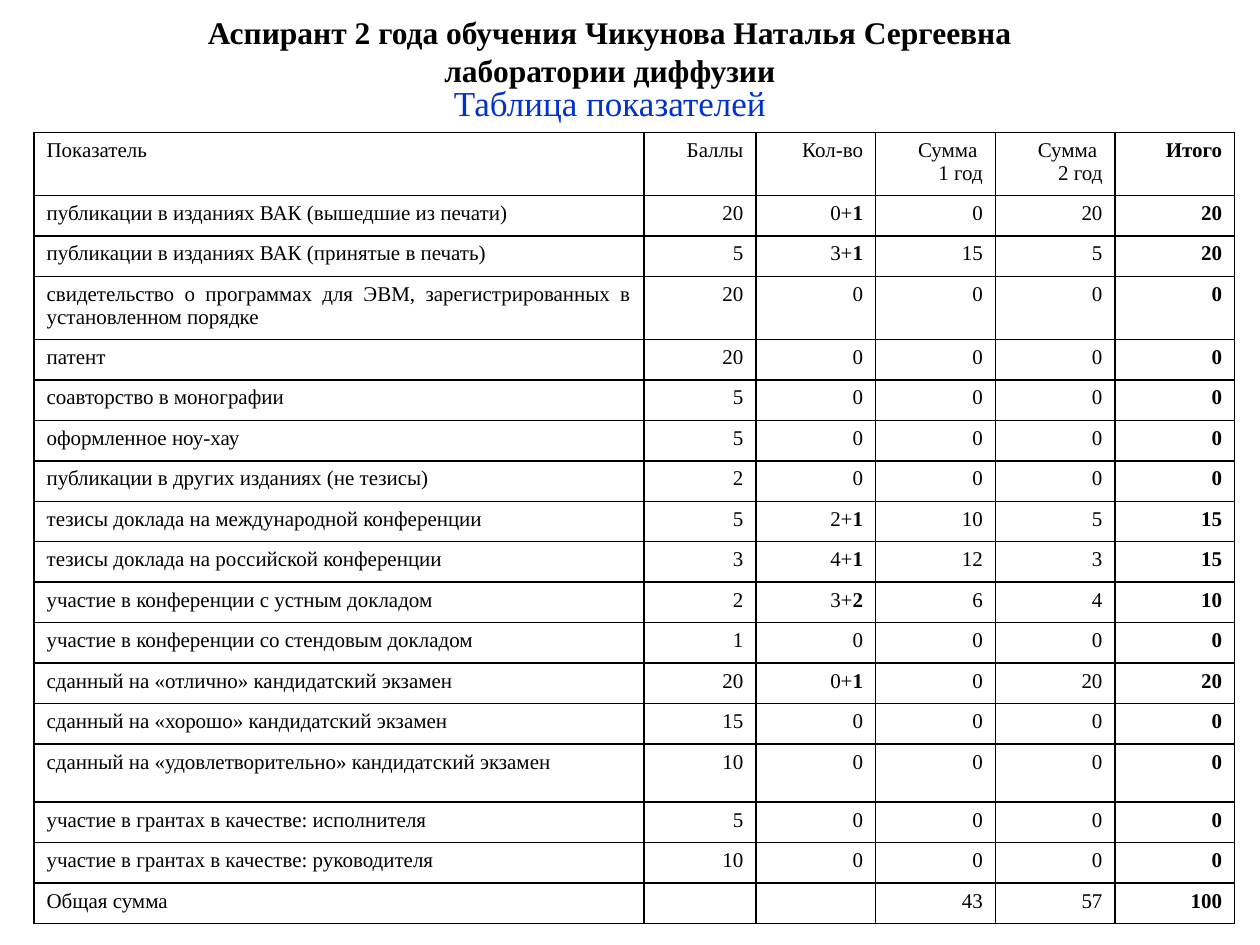
from lxml.etree import SubElement
from pptx import Presentation
from pptx.dml.color import RGBColor
from pptx.enum.text import MSO_ANCHOR, PP_ALIGN
from pptx.oxml import parse_xml
from pptx.oxml.ns import nsdecls, qn
from pptx.util import Inches, Pt

FONT = "Times New Roman"
COLORS = {"text": "000000", "accent": "0033CC", "line": "000000"}

TITLE = "Аспирант 2 года обучения Чикунова Наталья Сергеевна\vлаборатории диффузии"
CAPTION = "Таблица показателей"
HEAD = ("Показатель", "Баллы", "Кол-во", "Сумма \v1 год", "Сумма \v2 год", "Итого")
SCORES = [
    ("публикации в изданиях ВАК (вышедшие из печати)", 20, "0+1", 0, 20),
    ("публикации в изданиях ВАК (принятые в печать)", 5, "3+1", 15, 5),
    ("свидетельство о программах для ЭВМ, зарегистрированных в установленном порядке",
     20, "0", 0, 0),
    ("патент", 20, "0", 0, 0),
    ("соавторство в монографии", 5, "0", 0, 0),
    ("оформленное ноу-хау", 5, "0", 0, 0),
    ("публикации в других изданиях (не тезисы)", 2, "0", 0, 0),
    ("тезисы доклада на международной конференции", 5, "2+1", 10, 5),
    ("тезисы доклада на российской конференции", 3, "4+1", 12, 3),
    ("участие в конференции с устным докладом", 2, "3+2", 6, 4),
    ("участие в конференции со стендовым докладом", 1, "0", 0, 0),
    ("сданный на «отлично» кандидатский экзамен", 20, "0+1", 0, 20),
    ("сданный на «хорошо» кандидатский экзамен", 15, "0", 0, 0),
    ("сданный на «удовлетворительно» кандидатский экзамен", 10, "0", 0, 0),
    ("участие в грантах в качестве: исполнителя", 5, "0", 0, 0),
    ("участие в грантах в качестве: руководителя", 10, "0", 0, 0),
    ("Общая сумма", "", "", 43, 57),
]
LEFT, TOP, HEIGHT = 0.27, 1.05, 6.28
WIDTHS = (4.84, 0.89, 0.95, 0.95, 0.95, 0.95)
TALL = {0: 0.5, 3: 0.5, 14: 0.46}


def style(para, size, color, align, bold=None):
    para.alignment = align
    para.font.name = FONT
    para.font.size = Pt(size)
    para.font.bold = bold
    para.font.color.rgb = RGBColor.from_string(COLORS[color])


def add_label(slide, box, text, size, color, anchor, bold=False):
    frame = slide.shapes.add_textbox(*map(Inches, box)).text_frame
    frame.word_wrap = True
    frame.vertical_anchor = anchor
    para = frame.paragraphs[0]
    para.text = text
    style(para, size, color, PP_ALIGN.CENTER, bold)


def add_borders(cell):
    props = cell._tc.get_or_add_tcPr()
    for index, side in enumerate("LRTB"):
        props.insert(index, parse_xml(
            f'<a:ln{side} {nsdecls("a")} w="{Pt(1)}"><a:solidFill>'
            f'<a:srgbClr val="{COLORS["line"]}"/></a:solidFill></a:ln{side}>'))


def fill_cell(cell, text, col):
    cell.fill.background()
    add_borders(cell)
    para = cell.text_frame.paragraphs[0]
    base, plus, extra = text.partition("+")
    para.text = base + plus
    if extra:
        run = para.add_run()
        run.text = extra
        run.font.bold = True
    align = PP_ALIGN.RIGHT if col else PP_ALIGN.JUSTIFY
    style(para, 12, "text", align, True if col == len(HEAD) - 1 else None)
    if not text:
        SubElement(para._p, qn("a:endParaRPr"), sz="1200")


def add_scores(slide):
    rows = [HEAD] + [(*row, row[3] + row[4]) for row in SCORES]
    low = (HEIGHT - sum(TALL.values())) / (len(rows) - len(TALL))
    table = slide.shapes.add_table(
        len(rows), len(HEAD), Inches(LEFT), Inches(TOP),
        Inches(sum(WIDTHS)), Inches(HEIGHT)).table
    table.first_row = table.horz_banding = False
    for column, width in zip(table.columns, WIDTHS):
        column.width = Inches(width)
    for r, values in enumerate(rows):
        table.rows[r].height = Inches(TALL.get(r, low))
        for c, value in enumerate(values):
            fill_cell(table.cell(r, c), str(value), c)


def main():
    deck = Presentation()
    deck.slide_width, deck.slide_height = Inches(10), Inches(7.5)
    slide = deck.slides.add_slide(deck.slide_layouts[6])
    add_label(slide, (1.34, 0.6, 7, 0.47), CAPTION, 20, "accent", MSO_ANCHOR.TOP)
    add_scores(slide)
    add_label(slide, (0.59, 0.05, 8.5, 0.71), TITLE, 18, "text", MSO_ANCHOR.MIDDLE, True)
    deck.save("out.pptx")


if __name__ == "__main__":
    main()
